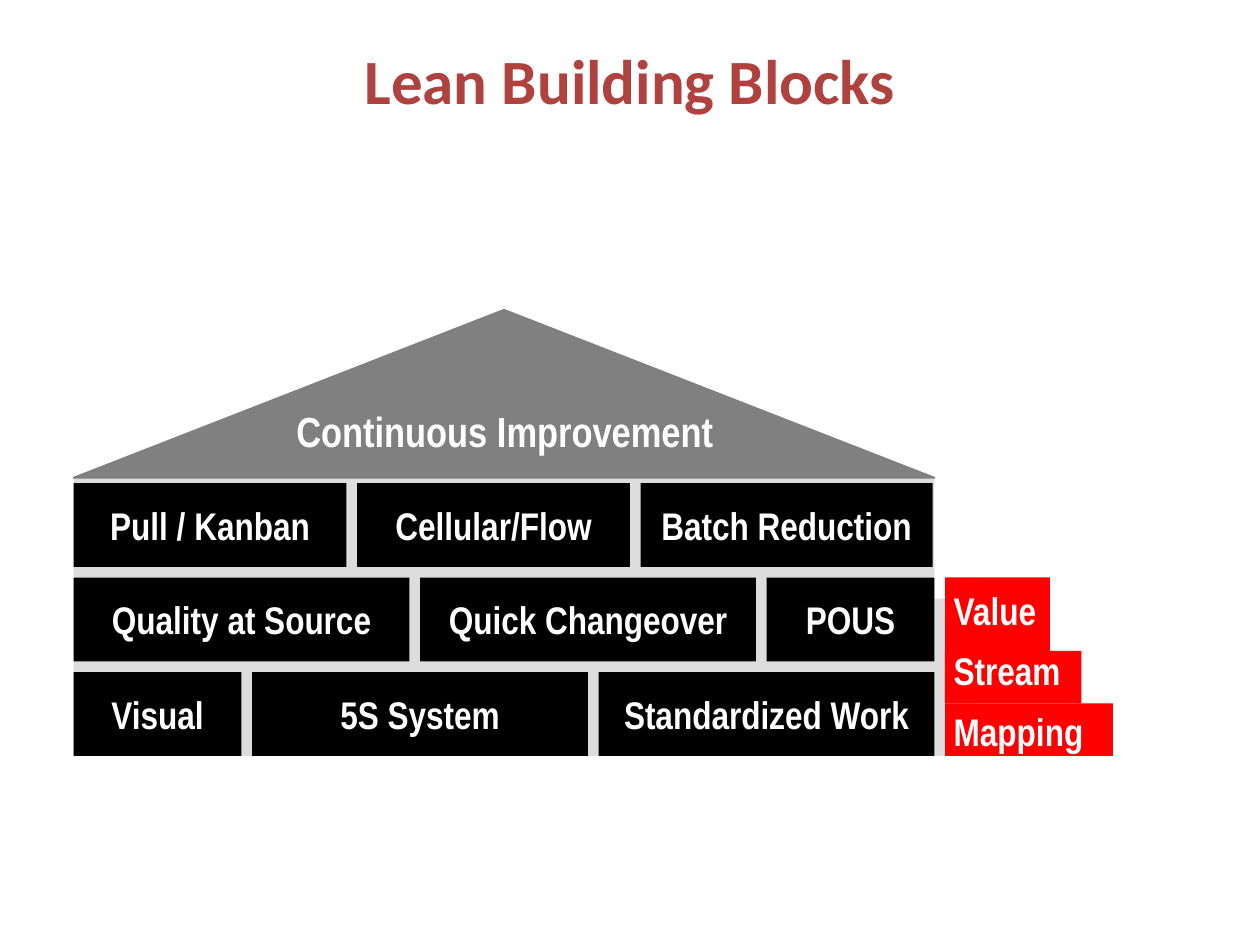
from pptx import Presentation
from pptx.dml.color import RGBColor
from pptx.enum.shapes import MSO_SHAPE
from pptx.enum.text import MSO_ANCHOR, PP_ALIGN
from pptx.util import Pt

RECT, TRIANGLE = MSO_SHAPE.RECTANGLE, MSO_SHAPE.ISOSCELES_TRIANGLE
MIDDLE, TOP = MSO_ANCHOR.MIDDLE, MSO_ANCHOR.TOP
CENTER, LEFT_ALIGN = PP_ALIGN.CENTER, PP_ALIGN.LEFT

COLORS = {"title": "AF423F", "wall": "DDDDDD", "roof": "808080",
          "block": "000000", "step": "FF0000", "text": "FFFFFF"}
TITLE = "Lean Building Blocks"
ROOF = "Continuous Improvement"
# Each block: label, width
ROWS = [
    [("Pull / Kanban", 156), ("Cellular/Flow", 156), ("Batch Reduction", 167)],
    [("Quality at Source", 192), ("Quick Changeover", 192), ("POUS", 96)],
    [("Visual", 96), ("5S System", 192), ("Standardized Work", 192)],
]
# Each step: label, width, height
STEPS = [("Value", 60, 42), ("Stream", 78, 30), ("Mapping", 96, 30)]

LEFT, ROW_TOP, ROW_H, GAP = 42, 276, 48, 6
HOUSE_W, WALL_TOP, BOTTOM = 492, 273, 432
STEP_LEFT, STEP_TOP = 540, 330


def rgb(name):
    return RGBColor.from_string(COLORS[name])


def set_font(p, name, size, color):
    p.font.name, p.font.size, p.font.bold = name, Pt(size), True
    p.font.color.rgb = rgb(color)


def set_frame(tf, anchor, wrap, margins=(0, 0, 0, 0)):
    tf.word_wrap, tf.vertical_anchor = wrap, anchor
    (tf.margin_left, tf.margin_top,
     tf.margin_right, tf.margin_bottom) = map(Pt, margins)


def add_box(s, kind, x, y, w, h, color, text="", size=22):
    sp = s.shapes.add_shape(kind, Pt(x), Pt(y), Pt(w), Pt(h))
    sp.shadow.inherit = False
    sp.fill.solid()
    sp.fill.fore_color.rgb = rgb(color)
    sp.line.fill.background()
    if text:
        set_frame(sp.text_frame, MIDDLE, False)
        p = sp.text_frame.paragraphs[0]
        p.text, p.alignment = text, CENTER
        set_font(p, "Arial Narrow", size, "text")
    return sp


prs = Presentation()
prs.slide_width, prs.slide_height = Pt(720), Pt(540)
s = prs.slides.add_slide(prs.slide_layouts[5])

# Title
title = s.shapes.title
title.left, title.top, title.width, title.height = Pt(36), Pt(14), Pt(648), Pt(63)
title.text_frame.text = TITLE
title.text_frame.vertical_anchor = MIDDLE
p = title.text_frame.paragraphs[0]
p.alignment = CENTER
set_font(p, "Calibri", 36, "title")

# Walls and roof
add_box(s, RECT, 522, 342, 36, 90, "wall")
add_box(s, RECT, LEFT, WALL_TOP, HOUSE_W, BOTTOM - WALL_TOP, "wall")
roof = add_box(s, TRIANGLE, LEFT, 177, HOUSE_W, 96, "roof")
roof.line.color.rgb = rgb("roof")
roof.line.width = Pt(1)
add_box(s, RECT, 162, 228, 253, 36, "roof", ROOF, 24)

# Building blocks
for i, row in enumerate(ROWS):
    x = LEFT
    for label, w in row:
        add_box(s, RECT, x, ROW_TOP + i * (ROW_H + GAP), w, ROW_H, "block", label)
        x += w + GAP

# Value stream steps
y = STEP_TOP
for _, w, h in STEPS:
    add_box(s, RECT, STEP_LEFT, y, w, h, "step")
    y += h
tb = s.shapes.add_textbox(Pt(STEP_LEFT), Pt(336), Pt(90), Pt(96))
tf = tb.text_frame
set_frame(tf, TOP, True, (5, 3.6, 7.2, 0))
tf.text = "\n".join(label for label, _, _ in STEPS)
for p in tf.paragraphs:
    p.alignment, p.line_spacing, p.space_after = LEFT_ALIGN, 0.85, Pt(12)
    set_font(p, "Arial Narrow", 22, "text")

prs.save("out.pptx")
